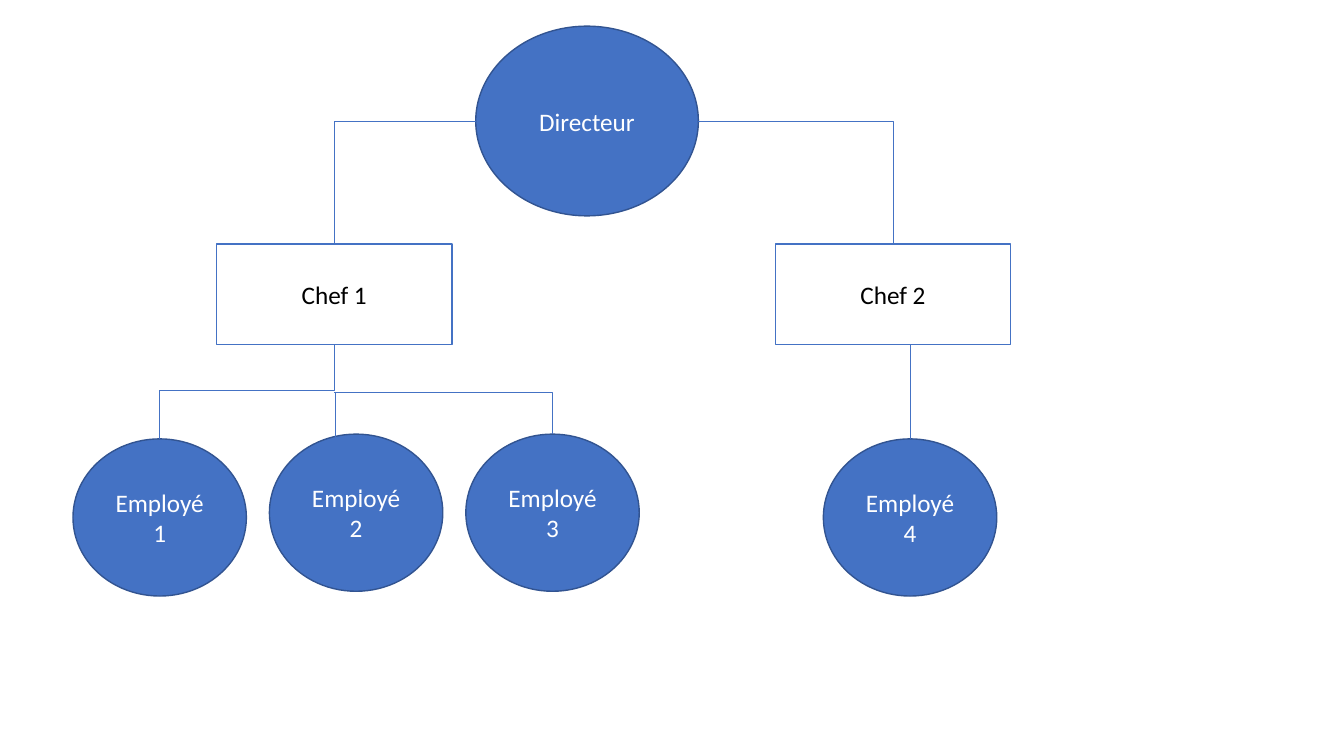
from dataclasses import dataclass

from lxml import etree
from pptx import Presentation
from pptx import util as u
from pptx.dml.color import RGBColor
from pptx.enum import shapes, text
from pptx.oxml.ns import qn

COLORS = {"blue": "4472C4", "navy": "325491", "white": "FFFFFF", "black": "000000"}


@dataclass(frozen=True)
class Node:
    label: str
    x: float
    y: float
    w: float
    h: float
    boss: bool = False

    @property
    def cx(self) -> float:
        return self.x + self.w / 2

    @property
    def cy(self) -> float:
        return self.y + self.h / 2

    @property
    def right(self) -> float:
        return self.x + self.w

    @property
    def bottom(self) -> float:
        return self.y + self.h


@dataclass(frozen=True)
class Link:
    x1: float
    y1: float
    x2: float
    y2: float
    preset: str
    bend: float | None = None
    vertical: bool = False


def color(name: str) -> RGBColor:
    return RGBColor.from_string(COLORS[name])


def draw_node(s, node: Node) -> None:
    kind = shapes.MSO_SHAPE.RECTANGLE if node.boss else shapes.MSO_SHAPE.OVAL
    sp = s.shapes.add_shape(kind, *map(u.Cm, (node.x, node.y, node.w, node.h)))
    sp.shadow.inherit = False
    if node.boss:
        sp.fill.background()
    else:
        sp.fill.solid()
        sp.fill.fore_color.rgb = color("blue")
    sp.line.color.rgb = color("blue" if node.boss else "navy")
    sp.line.width = u.Pt(1)
    tf = sp.text_frame
    tf.word_wrap = True
    tf.vertical_anchor = text.MSO_ANCHOR.MIDDLE
    p = tf.paragraphs[0]
    p.alignment = text.PP_ALIGN.CENTER
    r = p.add_run()
    r.text = node.label
    for key, value in {"name": "Calibri", "size": u.Pt(18)}.items():
        setattr(r.font, key, value)
    r.font.color.rgb = color("black" if node.boss else "white")


def draw_link(s, link: Link) -> None:
    x1, y1, x2, y2 = link.x1, link.y1, link.x2, link.y2
    if link.vertical:
        mx, my = (x1 + x2) / 2, (y1 + y2) / 2
        dx, dy = (x2 - x1) / 2, (y2 - y1) / 2
        x1, y1, x2, y2 = mx - dy, my + dx, mx + dy, my - dx
    cx = s.shapes.add_connector(shapes.MSO_CONNECTOR.ELBOW, *map(u.Cm, (x1, y1, x2, y2)))
    cx.line.color.rgb = color("blue")
    cx.line.width = u.Pt(0.5)
    props = cx._element.spPr
    etree.SubElement(props, qn("a:effectLst"))
    if link.vertical:
        props.find(qn("a:xfrm")).set("rot", "5400000")
    geom = props.find(qn("a:prstGeom"))
    geom.set("prst", link.preset)
    if link.bend is not None:
        guide = etree.SubElement(geom.find(qn("a:avLst")), qn("a:gd"))
        guide.set("name", "adj1")
        guide.set("fmla", f"val {round(link.bend * 100000)}")


def main() -> None:
    prs = Presentation()
    prs.slide_width, prs.slide_height = u.Cm(33.87), u.Cm(19.05)
    s = prs.slides.add_slide(prs.slide_layouts[6])

    director = Node("Directeur", 11.99, 0.66, 5.61, 4.78)
    chefs = [Node(f"Chef {i}", x, 6.15, 5.93, 2.54, True)
             for i, x in enumerate((5.46, 19.54), 1)]
    staff = [Node(f"Employé {i}", x, y, 4.37, 3.96)
             for i, (x, y) in enumerate(
                 ((1.84, 11.06), (6.79, 10.94), (11.74, 10.94), (20.75, 11.06)), 1)]
    for node in (director, *chefs, *staff):
        draw_node(s, node)

    left, right = chefs
    first, _, third, fourth = staff
    fork = 9.9
    links = [
        Link(director.x, director.cy, left.cx, left.y, "bentConnector2"),
        Link(director.right, director.cy, right.cx, right.y, "bentConnector2"),
        Link(left.cx, left.bottom, first.cx, first.y, "bentConnector3", 0.48, True),
        Link(left.cx, fork, left.cx + 2.54, fork + 2.54, "bentConnector3", 0.01),
        Link(left.cx, fork, third.cx, third.y, "bentConnector2"),
        Link(fourth.cx, right.bottom, fourth.cx, fourth.y, "line"),
    ]
    for link in links:
        draw_link(s, link)
    prs.save("out.pptx")


if __name__ == "__main__":
    main()
